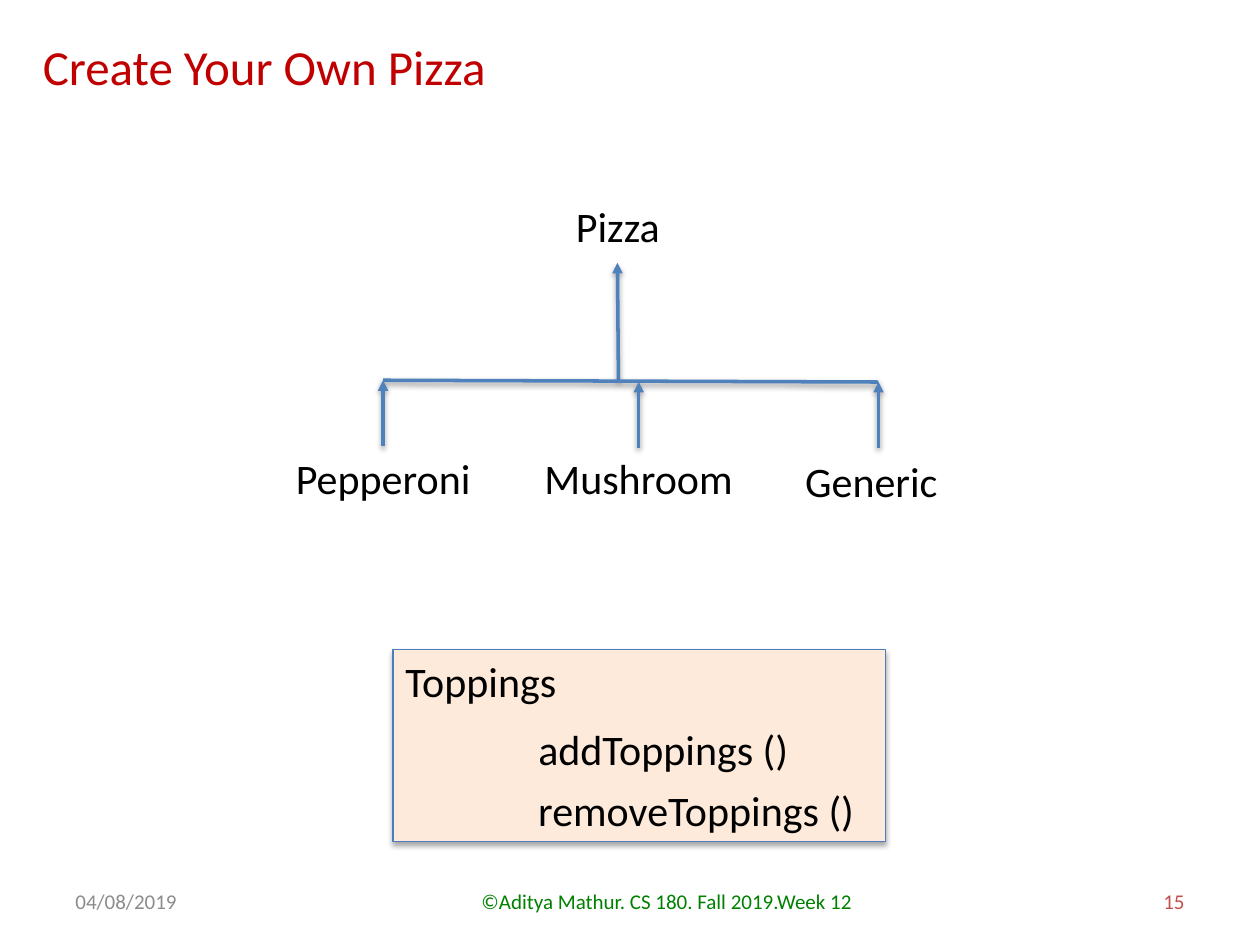
"""Build the pizza class hierarchy slide with its toppings box."""
from lxml import etree
from pptx import Presentation
from pptx.dml.color import RGBColor
from pptx.enum.shapes import MSO_CONNECTOR, MSO_SHAPE
from pptx.enum.text import MSO_ANCHOR, MSO_AUTO_SIZE, PP_ALIGN
from pptx.oxml.ns import qn
from pptx.util import Pt

STRAIGHT = MSO_CONNECTOR.STRAIGHT
RECTANGLE = MSO_SHAPE.RECTANGLE
TOP, MIDDLE = MSO_ANCHOR.TOP, MSO_ANCHOR.MIDDLE
NO_AUTOFIT = MSO_AUTO_SIZE.NONE
LEFT, CENTER, RIGHT = PP_ALIGN.LEFT, PP_ALIGN.CENTER, PP_ALIGN.RIGHT

FONT = "Calibri"
BLACK = RGBColor(0x00, 0x00, 0x00)
RED = RGBColor(0xC0, 0x00, 0x00)
GRAY = RGBColor(0x8C, 0x8C, 0x8C)
GREEN = RGBColor(0x00, 0x80, 0x00)
BRICK = RGBColor(0xC0, 0x50, 0x4D)
BLUE = RGBColor(0x4F, 0x81, 0xBD)
BORDER_BLUE = RGBColor(0x4B, 0x7E, 0xBC)
PEACH = RGBColor(0xFD, 0xEA, 0xDA)


def write_text(shape, text, size, color, alignment=LEFT, anchor=TOP, wrap=True):
    frame = shape.text_frame
    frame.auto_size = NO_AUTOFIT
    frame.word_wrap = wrap
    frame.vertical_anchor = anchor
    paragraph = frame.paragraphs[0]
    paragraph.alignment = alignment
    run = paragraph.add_run()
    run.text = text
    run.font.name = FONT
    run.font.size = Pt(size)
    run.font.color.rgb = color


presentation = Presentation()
presentation.slide_width, presentation.slide_height = Pt(720), Pt(540)
slide = presentation.slides.add_slide(presentation.slide_layouts[5])

title = slide.shapes.title
title.left, title.top, title.width, title.height = Pt(17.3), Pt(17.3), Pt(433.5), Pt(41)
write_text(title, "Create Your Own Pizza", 28, RED)

footers = [
    ("04/08/2019", 36, 168, GRAY, LEFT),
    ("©Aditya Mathur. CS 180. Fall 2019.Week 12", 246, 270, GREEN, CENTER),
    ("15", 516, 168, BRICK, RIGHT),
]
for text, left, width, color, alignment in footers:
    footer = slide.shapes.add_textbox(Pt(left), Pt(500.5), Pt(width), Pt(28.75))
    write_text(footer, text, 12, color, alignment, MIDDLE)

toppings_box = slide.shapes.add_shape(RECTANGLE, Pt(224.6), Pt(371), Pt(281.5), Pt(110))
toppings_box.fill.solid()
toppings_box.fill.fore_color.rgb = PEACH
toppings_box.line.color.rgb = BORDER_BLUE
toppings_box.line.width = Pt(0.75)

labels = [
    ("Pizza", 322, 111, 62.5),
    ("Pepperoni", 162, 255, 115),
    ("Mushroom", 304, 255, 123),
    ("Generic", 453, 257, 90.5),
    ("Toppings", 224.6, 371, 101.5),
    ("addToppings ()", 300.5, 410, 159),
    ("removeToppings ()", 300.5, 444.5, 196.5),
]
for text, left, top, width in labels:
    label = slide.shapes.add_textbox(Pt(left), Pt(top), Pt(width), Pt(36))
    write_text(label, text, 24, BLACK, wrap=False)

lines = [
    (353.4, 217.5, 352.8, 150.2, True),
    (218.9, 217.3, 502, 218.3, False),
    (218.9, 255, 218.9, 217.3, True),
    (365, 255.8, 365, 218.2, True),
    (502, 255.8, 502, 218.2, True),
]
for start_x, start_y, end_x, end_y, has_arrow in lines:
    line = slide.shapes.add_connector(STRAIGHT, Pt(start_x), Pt(start_y), Pt(end_x), Pt(end_y))
    line.line.color.rgb = BLUE
    line.line.width = Pt(2)
    if has_arrow:
        etree.SubElement(line.line._get_or_add_ln(), qn("a:tailEnd"), type="triangle")

presentation.save("out.pptx")
